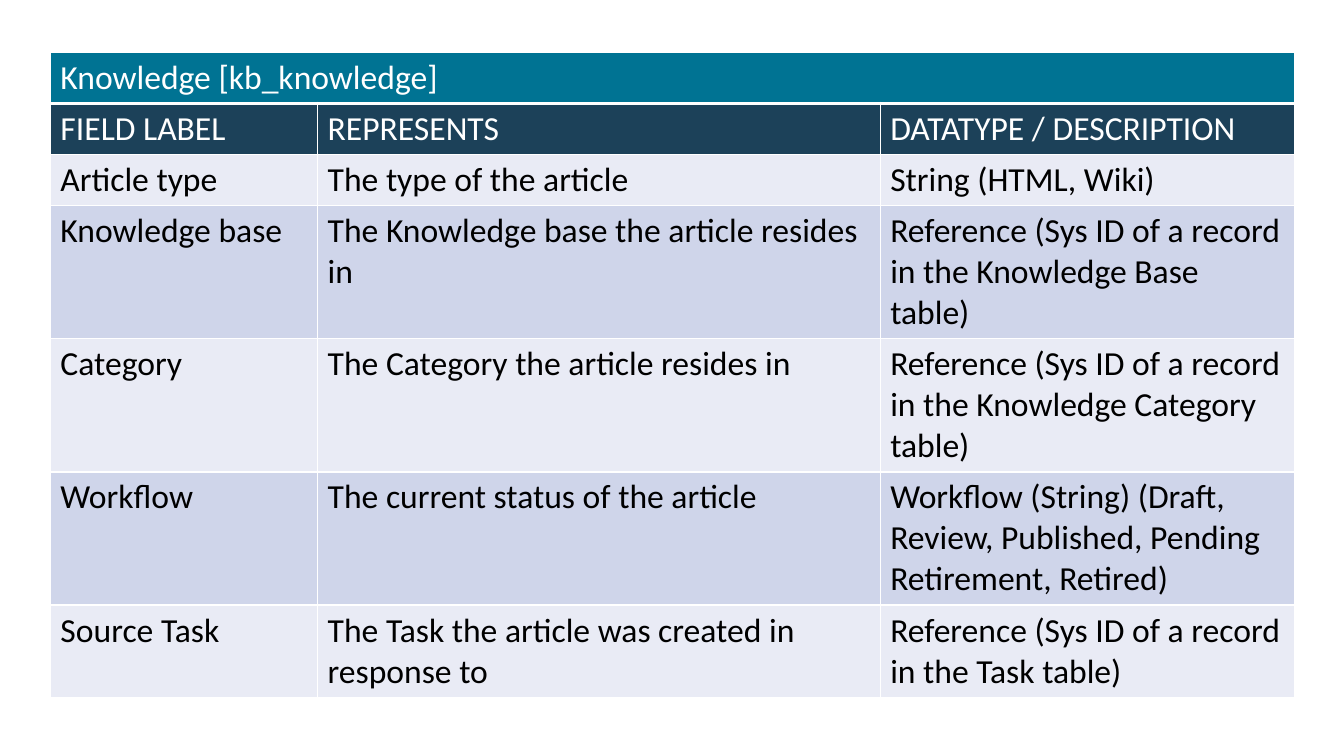
from lxml.etree import SubElement
from pptx import Presentation
from pptx.dml.color import RGBColor
from pptx.oxml.ns import qn
from pptx.util import Inches, Pt

TEAL = RGBColor(0x00, 0x73, 0x93)
NAVY = RGBColor(0x1C, 0x41, 0x59)
PALE = RGBColor(0xE9, 0xEB, 0xF5)
LILAC = RGBColor(0xCF, 0xD5, 0xEA)
WHITE = RGBColor(0xFF, 0xFF, 0xFF)
BLACK = RGBColor(0x00, 0x00, 0x00)

TITLE = "Knowledge [kb_knowledge]"
HEADS = ("FIELD LABEL", "REPRESENTS", "DATATYPE / DESCRIPTION")
FIELDS = (
    ("Article type", "The type of the article", "String (HTML, Wiki)"),
    ("Knowledge base", "The Knowledge base the article resides in",
     "Reference (Sys ID of a record in the Knowledge Base table)"),
    ("Category", "The Category the article resides in",
     "Reference (Sys ID of a record in the Knowledge Category table)"),
    ("Workflow", "The current status of the article",
     "Workflow (String) (Draft, Review, Published, Pending Retirement, Retired)"),
    ("Source Task", "The Task the article was created in response to",
     "Reference (Sys ID of a record in the Task table)"),
)
WIDTHS = (2.65, 5.58, 4.11)
HEIGHT = 0.46


def set_edge(cell, side, width):
    """Draw one white cell border."""
    props = cell._tc.get_or_add_tcPr()
    line = SubElement(props, qn(f"a:ln{side}"), w=str(Pt(width)))
    fill = SubElement(line, qn("a:solidFill"))
    SubElement(fill, qn("a:srgbClr"), val=str(WHITE))


def fill_row(table, index, texts, back, color, top=1, bottom=1):
    """Write and format one table row."""
    for cell, text in zip(table.rows[index].cells, texts):
        for side, width in (("L", 1), ("R", 1), ("T", top), ("B", bottom)):
            set_edge(cell, side, width)
        cell.fill.solid()
        cell.fill.fore_color.rgb = back
        cell.text = text
        font = cell.text_frame.paragraphs[0].font
        font.name = "Calibri"
        font.size = Pt(24)
        font.bold = False
        font.color.rgb = color


def add_grid(slide):
    """Add the table with its column widths."""
    count = len(FIELDS) + 2
    frame = slide.shapes.add_table(
        count, len(WIDTHS), Inches(0.5), Inches(0.52),
        Inches(sum(WIDTHS)), Inches(HEIGHT * count))
    table = frame.table
    for column, width in zip(table.columns, WIDTHS):
        column.width = Inches(width)
    return table


def main():
    deck = Presentation()
    deck.slide_width = Inches(13.33)
    deck.slide_height = Inches(7.5)
    slide = deck.slides.add_slide(deck.slide_layouts[6])
    table = add_grid(slide)

    # Table name across all columns, then column heads
    table.cell(0, 0).merge(table.cell(0, len(WIDTHS) - 1))
    fill_row(table, 0, (TITLE, "", ""), TEAL, WHITE, bottom=3)
    fill_row(table, 1, HEADS, NAVY, WHITE, top=3)

    # Banded field rows
    for index, texts in enumerate(FIELDS, 2):
        fill_row(table, index, texts, LILAC if index % 2 else PALE, BLACK)

    deck.save("out.pptx")


if __name__ == "__main__":
    main()
